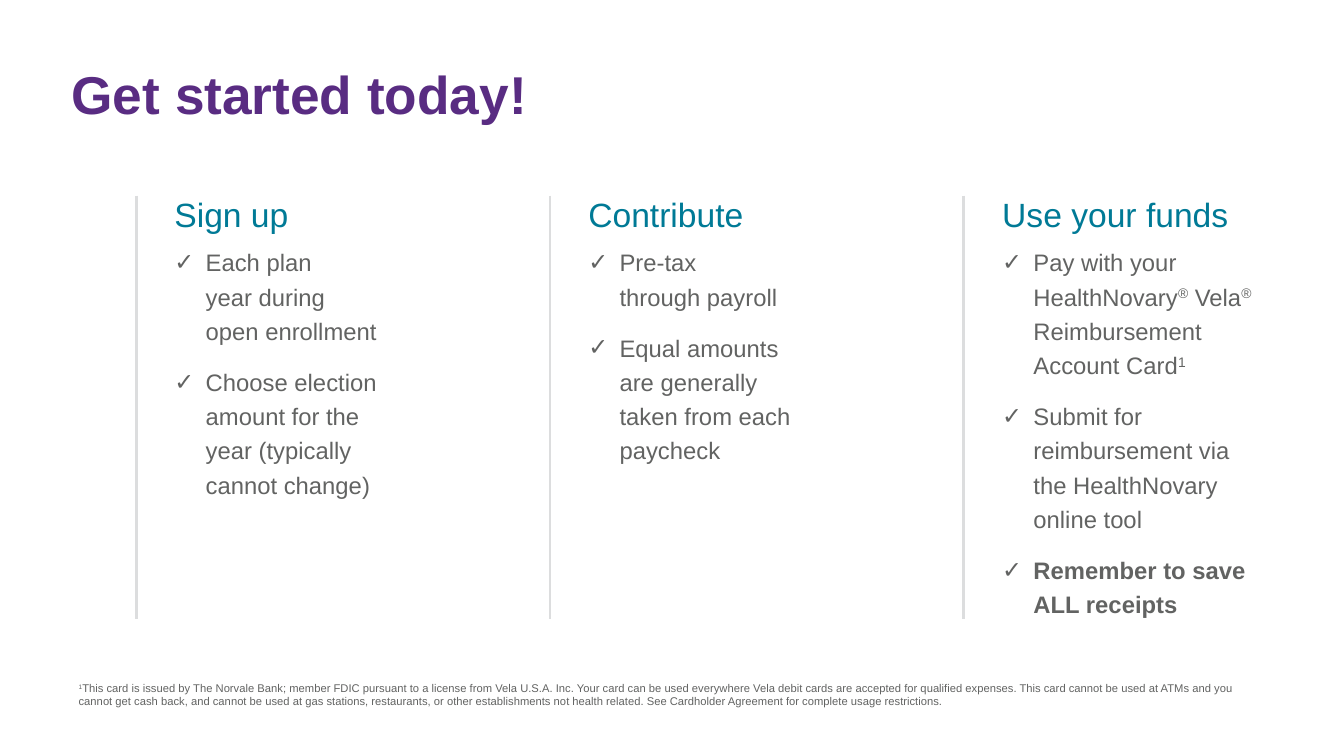
from dataclasses import dataclass

from lxml.etree import SubElement
from pptx import Presentation
from pptx.dml.color import RGBColor
from pptx.enum.shapes import MSO_CONNECTOR
from pptx.enum.text import MSO_ANCHOR, MSO_AUTO_SIZE, PP_ALIGN
from pptx.oxml.ns import qn
from pptx.util import Inches, Pt

TITLE = "Get started today!"
COLUMNS = [
    {"heading": "Sign up", "width": 2.56, "height": 3.58, "bullets": [
        ("Each plan \nyear during \nopen enrollment", False),
        ("Choose election amount for the year (typically cannot change)", False),
    ]},
    {"heading": "Contribute", "width": 2.42, "height": 3.15, "bullets": [
        ("Pre-tax \nthrough payroll", False),
        ("Equal amounts are generally taken from each paycheck", False),
    ]},
    {"heading": "Use your funds", "width": 2.94, "height": 4.49, "bullets": [
        ("Pay with your HealthNovary|®| Vela|®| Reimbursement Account Card|1|", False),
        ("Submit for reimbursement via\nthe HealthNovary online tool", False),
        ("Remember to save \nALL receipts", True),
    ]},
]
FOOTNOTE = (
    "|1|This card is issued by The Norvale Bank; member FDIC pursuant to a license from "
    "Vela U.S.A. Inc. Your card can be used everywhere Vela debit cards are accepted for "
    "qualified expenses. This card cannot be used at ATMs and you cannot get cash back, and "
    "cannot be used at gas stations, restaurants, or other establishments not health related. "
    "See Cardholder Agreement for complete usage restrictions."
)

FIRST_RULE, LAST_RULE = 1.35, 9.56
RULE_TOP, RULE_BOTTOM = 1.94, 6.14
COLUMN_TOP, COLUMN_OFFSET = 1.83, 0.28
BULLET_INDENT = 0.31


@dataclass(frozen=True)
class Theme:
    """Colours, font and type sizes of the slide."""
    font: str = "Arial"
    purple: RGBColor = RGBColor(0x59, 0x2C, 0x82)
    teal: RGBColor = RGBColor(0x00, 0x7A, 0x96)
    grey: RGBColor = RGBColor(0x62, 0x63, 0x62)
    rule: RGBColor = RGBColor(0xDC, 0xDD, 0xDE)
    title_size: int = 38
    heading_size: int = 24
    bullet_size: int = 17
    footnote_size: int = 8


THEME = Theme()


def place(shape, left, top, width, height):
    """Move a placeholder and return its text frame, anchored at the top."""
    shape.left, shape.top = Inches(left), Inches(top)
    shape.width, shape.height = Inches(width), Inches(height)
    frame = shape.text_frame
    frame.word_wrap = True
    frame.auto_size = MSO_AUTO_SIZE.NONE
    frame.vertical_anchor = MSO_ANCHOR.TOP
    return frame


def write(paragraph, text, size, color, bold=False, bullet=False, line=1.0, after=0):
    """Fill a paragraph; text between vertical bars becomes superscript."""
    properties = paragraph._p.get_or_add_pPr()
    indent = Inches(BULLET_INDENT) if bullet else 0
    properties.set("marL", str(indent))
    properties.set("indent", str(-indent))
    if bullet:
        SubElement(properties, qn("a:buFont"), typeface=THEME.font)
        SubElement(properties, qn("a:buChar"), char="✓")
    else:
        SubElement(properties, qn("a:buNone"))
    paragraph.alignment = PP_ALIGN.LEFT
    paragraph.line_spacing = line
    paragraph.space_before, paragraph.space_after = Pt(0), Pt(after)
    font = paragraph.font
    font.name, font.size, font.bold = THEME.font, Pt(size), bold
    font.color.rgb = color
    for position, segment in enumerate(text.split("|")):
        for number, words in enumerate(segment.split("\n")):
            if number:
                paragraph.add_line_break()
            if words:
                run = paragraph.add_run()
                run.text = words
                if position % 2:
                    run._r.get_or_add_rPr().set("baseline", "30000")


def add_rule(slide, x):
    """Draw the vertical rule to the left of a column."""
    rule = slide.shapes.add_connector(
        MSO_CONNECTOR.STRAIGHT, Inches(x), Inches(RULE_TOP), Inches(x), Inches(RULE_BOTTOM))
    rule.line.color.rgb = THEME.rule
    rule.line.width = Pt(2)
    SubElement(rule._element.spPr, qn("a:effectLst"))


def fill_column(placeholder, column, left):
    """Write one column's heading and its checked list."""
    frame = place(placeholder, left, COLUMN_TOP, column["width"], column["height"])
    write(frame.paragraphs[0], column["heading"], THEME.heading_size, THEME.teal,
          line=1.1, after=6)
    for text, bold in column["bullets"]:
        write(frame.add_paragraph(), text, THEME.bullet_size, THEME.grey,
              bold=bold, bullet=True, line=1.2, after=12)


def main():
    """Build the slide and save it."""
    presentation = Presentation()
    presentation.slide_width, presentation.slide_height = Inches(13.33), Inches(7.5)
    slide = presentation.slides.add_slide(
        presentation.slide_layouts.get_by_name("Comparison"))
    title, *bodies = [shape for shape in slide.placeholders]

    frame = place(title, 0.61, 0.3, 12, 0.83)
    frame.margin_top = frame.margin_bottom = Inches(0.1)
    write(frame.paragraphs[0], TITLE, THEME.title_size, THEME.purple,
          bold=True, line=Pt(60.8))

    pitch = (LAST_RULE - FIRST_RULE) / (len(COLUMNS) - 1)
    for index, column in enumerate(COLUMNS):
        x = FIRST_RULE + index * pitch
        add_rule(slide, x)
        fill_column(bodies[index], column, x + COLUMN_OFFSET)

    frame = place(bodies[-1], 0.68, 6.71, 11.87, 0.5)
    write(frame.paragraphs[0], FOOTNOTE, THEME.footnote_size, THEME.grey, after=1.3)
    presentation.save("out.pptx")


if __name__ == "__main__":
    main()
